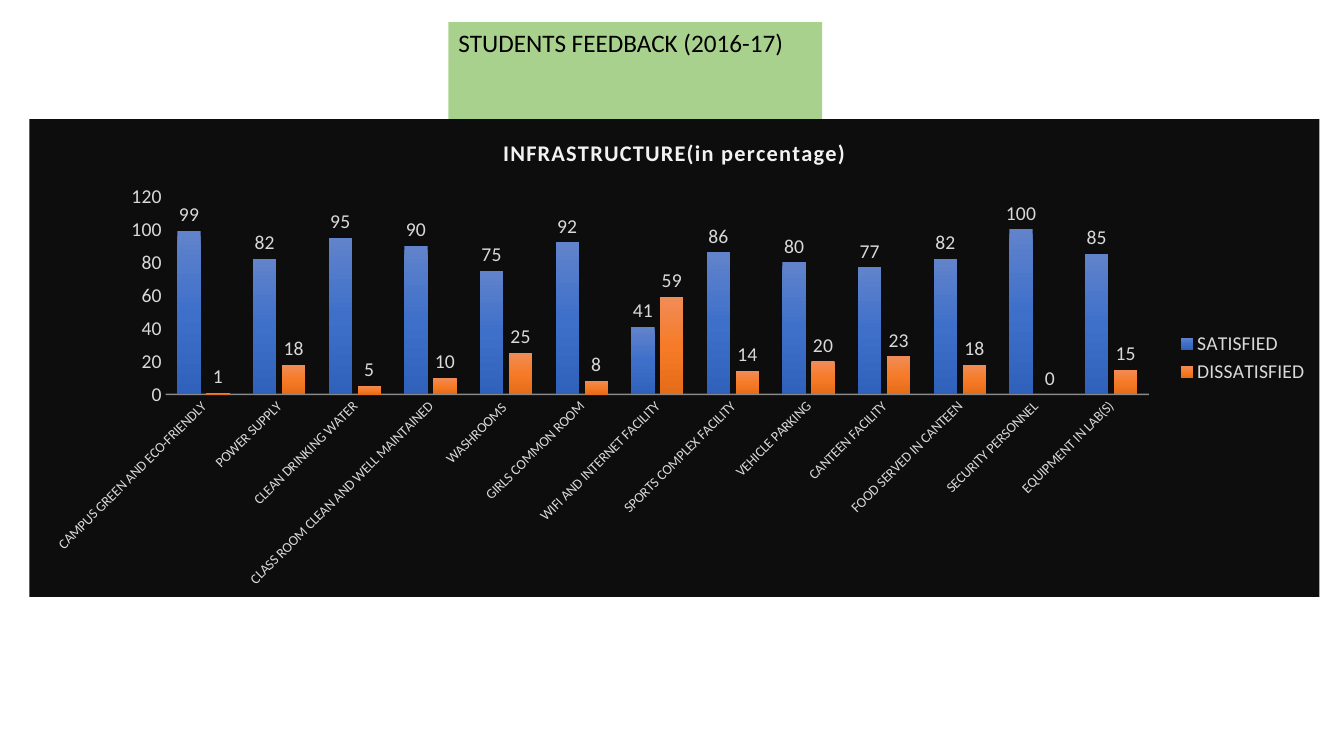
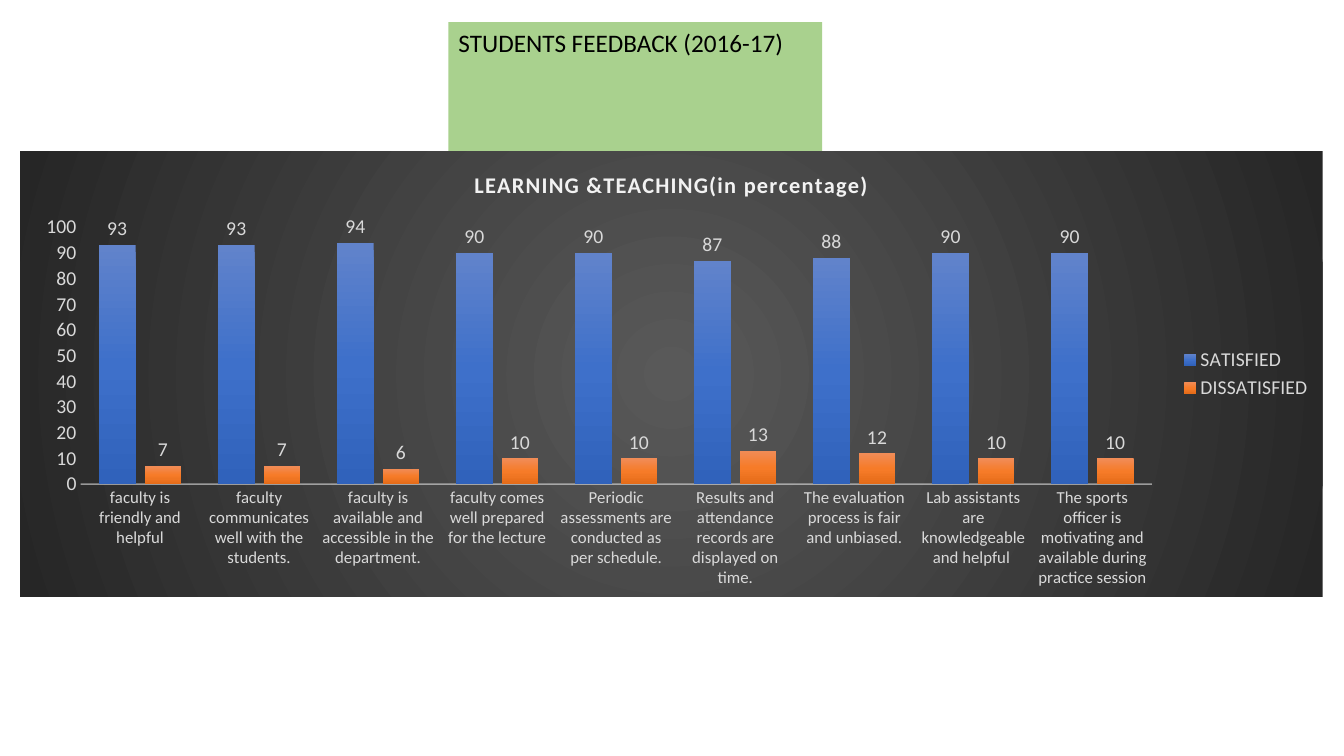
from dataclasses import dataclass
from typing import Any, Optional

from lxml.etree import SubElement
from pptx import Presentation
from pptx.chart.data import CategoryChartData
from pptx.dml.color import RGBColor
from pptx.enum.chart import XL_CHART_TYPE as ChartType
from pptx.enum.chart import XL_LABEL_POSITION as LabelPosition
from pptx.enum.chart import XL_LEGEND_POSITION as LegendPosition
from pptx.enum.chart import XL_TICK_MARK as TickMark
from pptx.enum.text import MSO_ANCHOR as Anchor
from pptx.enum.text import MSO_AUTO_SIZE as AutoSize
from pptx.enum.text import PP_ALIGN as Align
from pptx.oxml import parse_xml
from pptx.oxml.ns import nsdecls, qn
from pptx.util import Cm, Pt

Stops = tuple[tuple[int, str], ...]


# Theme: colours, font and type sizes
@dataclass(frozen=True)
class Theme:
    font: str = "Calibri"
    black: str = "000000"
    banner: str = "A9D18E"
    chart_title: str = "F2F2F2"
    chart_text: str = "D9D9D9"
    axis_line: str = "F2F2F2"
    axis_opacity: int = 54
    satisfied: Stops = ((0, "6183CB"), (50, "3E70CA"), (100, "3062BB"))
    dissatisfied: Stops = ((0, "F18C57"), (50, "F67B28"), (100, "E56C19"))
    flat_dark: Stops = ((0, "0D0D0D"),)
    radial_dark: Stops = ((0, "595959"), (100, "262626"))
    banner_size: int = 18
    title_size: int = 16
    text_size: int = 14


THEME = Theme()
BANNER_TEXT = "STUDENTS FEEDBACK (2016-17)"


@dataclass(frozen=True)
class Answer:
    question: str
    satisfied: int
    dissatisfied: int


@dataclass(frozen=True)
class FeedbackChart:
    title: str
    box: tuple[float, float, float, float]  # left, top, width, height in cm
    background: Stops
    label_size: int
    label_angle: int
    axis_top: int
    axis_step: int
    answers: tuple[Answer, ...]


CHARTS = (
    FeedbackChart(
        "INFRASTRUCTURE(in percentage)", (0.74, 3, 32.51, 12.04),
        THEME.flat_dark, 10, -45, 120, 20,
        (
            Answer("CAMPUS GREEN AND ECO-FRIENDLY", 99, 1),
            Answer("POWER SUPPLY", 82, 18),
            Answer("CLEAN DRINKING WATER", 95, 5),
            Answer("CLASS ROOM CLEAN AND WELL MAINTAINED", 90, 10),
            Answer("WASHROOMS ", 75, 25),
            Answer("GIRLS COMMON ROOM", 92, 8),
            Answer("WIFI AND INTERNET FACILITY", 41, 59),
            Answer("SPORTS COMPLEX FACILITY", 86, 14),
            Answer("VEHICLE PARKING", 80, 20),
            Answer("CANTEEN FACILITY", 77, 23),
            Answer("FOOD SERVED IN CANTEEN", 82, 18),
            Answer("SECURITY PERSONNEL", 100, 0),
            Answer(" EQUIPMENT IN LAB(S)", 85, 15),
        ),
    ),
    FeedbackChart(
        "LEARNING &TEACHING(in percentage)", (0.51, 3.81, 32.82, 11.23),
        THEME.radial_dark, 12, 0, 100, 10,
        (
            Answer("faculty is friendly and helpful", 93, 7),
            Answer("faculty communicates well with the students.", 93, 7),
            Answer("faculty is available and accessible in the department.", 94, 6),
            Answer("faculty comes well prepared for the lecture", 90, 10),
            Answer("Periodic assessments are conducted as per schedule.", 90, 10),
            Answer("Results and attendance records are displayed on time.", 87, 13),
            Answer("The evaluation process is fair and unbiased.", 88, 12),
            Answer("Lab assistants are knowledgeable and helpful ", 90, 10),
            Answer("The sports officer is motivating and available during "
                   "practice session", 90, 10),
        ),
    ),
)


# Formatting helpers
def apply_format(target: Any, values: dict[str, Any]) -> None:
    for name, value in values.items():
        setattr(target, name, value)


def style_font(font: Any, size: int, color: str, bold: Optional[bool] = False) -> None:
    apply_format(font, {"name": THEME.font, "size": Pt(size), "bold": bold})
    font.color.rgb = RGBColor.from_string(color)


def fill_xml(stops: Stops, radial: bool = False) -> str:
    """One stop gives a solid fill, several give a gradient."""
    if len(stops) == 1:
        return f'<a:solidFill><a:srgbClr val="{stops[0][1]}"/></a:solidFill>'
    marks = "".join(
        f'<a:gs pos="{position * 1000}"><a:srgbClr val="{color}"/></a:gs>'
        for position, color in stops
    )
    direction = (
        '<a:path path="circle"><a:fillToRect l="50000" t="50000" r="50000" b="50000"/></a:path>'
        if radial else '<a:lin ang="5400000" scaled="0"/>'
    )
    return f'<a:gradFill rotWithShape="1"><a:gsLst>{marks}</a:gsLst>{direction}</a:gradFill>'


def area_format(stops: Stops, radial: bool = False) -> Any:
    return parse_xml(
        f'<c:spPr {nsdecls("c", "a")}>{fill_xml(stops, radial)}'
        "<a:ln><a:noFill/></a:ln></c:spPr>"
    )


# Parts of a slide
def format_banner(title: Any) -> None:
    apply_format(title, {"left": Cm(11.3), "top": Cm(0.56),
                         "width": Cm(9.42), "height": Cm(1.02)})
    title.fill.solid()
    title.fill.fore_color.rgb = RGBColor.from_string(THEME.banner)
    frame = title.text_frame
    frame.text = BANNER_TEXT
    apply_format(frame, {"word_wrap": True, "vertical_anchor": Anchor.TOP,
                         "auto_size": AutoSize.SHAPE_TO_FIT_TEXT})
    paragraph = frame.paragraphs[0]
    paragraph.alignment = Align.LEFT
    style_font(paragraph.runs[0].font, THEME.banner_size, THEME.black)


def format_title(chart: Any, text: str) -> None:
    frame = chart.chart_title.text_frame
    frame.text = text
    run = frame.paragraphs[0].runs[0]
    style_font(run.font, THEME.title_size, THEME.chart_title, bold=True)
    run._r.get_or_add_rPr().set("spc", "100")


def format_axes(chart: Any, content: FeedbackChart) -> None:
    category_axis, value_axis = chart.category_axis, chart.value_axis
    for axis, size in ((category_axis, content.label_size), (value_axis, THEME.text_size)):
        apply_format(axis, {"has_major_gridlines": False,
                            "major_tick_mark": TickMark.NONE,
                            "minor_tick_mark": TickMark.NONE})
        style_font(axis.tick_labels.font, size, THEME.chart_text)
    apply_format(value_axis, {"minimum_scale": 0, "maximum_scale": content.axis_top,
                              "major_unit": content.axis_step})
    value_axis.format.line.fill.background()

    line = category_axis.format.line
    line.width = Pt(1)
    line.color.rgb = RGBColor.from_string(THEME.axis_line)
    axis_element = category_axis._element
    line_color = axis_element.find(f'{qn("c:spPr")}//{qn("a:srgbClr")}')
    SubElement(line_color, qn("a:alpha")).set("val", str(THEME.axis_opacity * 1000))
    body = axis_element.find(f'{qn("c:txPr")}/{qn("a:bodyPr")}')
    body.set("rot", str(content.label_angle * 60000))
    body.set("vert", "horz")


def format_columns(plot: Any) -> None:
    apply_format(plot, {"gap_width": 100, "overlap": -24, "vary_by_categories": False})
    for series, stops in zip(plot.series, (THEME.satisfied, THEME.dissatisfied)):
        series.format.fill.background()
        old_format = series._element.find(qn("c:spPr"))
        old_format.getparent().replace(old_format, area_format(stops))
        labels = series.data_labels
        apply_format(labels, {"show_value": True, "position": LabelPosition.OUTSIDE_END})
        style_font(labels.font, THEME.text_size, THEME.chart_text)


def add_feedback_chart(slide: Any, content: FeedbackChart) -> None:
    data = CategoryChartData()
    data.categories = [answer.question for answer in content.answers]
    data.add_series("SATISFIED", [answer.satisfied for answer in content.answers])
    data.add_series("DISSATISFIED", [answer.dissatisfied for answer in content.answers])
    box = [Cm(length) for length in content.box]
    chart = slide.shapes.add_chart(ChartType.COLUMN_CLUSTERED, *box, data).chart

    style_font(chart.font, THEME.text_size, THEME.black, bold=None)
    background = area_format(content.background, radial=True)
    chart.element.find(qn("c:chart")).addnext(background)
    apply_format(chart, {"has_title": True, "has_legend": True})
    format_title(chart, content.title)
    apply_format(chart.legend, {"position": LegendPosition.RIGHT,
                                "include_in_layout": False})
    style_font(chart.legend.font, THEME.text_size, THEME.chart_text)
    format_axes(chart, content)
    format_columns(chart.plots[0])


def main() -> None:
    presentation = Presentation()
    apply_format(presentation, {"slide_width": Cm(33.87), "slide_height": Cm(19.05)})
    title_only = presentation.slide_layouts[5]
    for content in CHARTS:
        slide = presentation.slides.add_slide(title_only)
        format_banner(slide.shapes.title)
        add_feedback_chart(slide, content)
    presentation.save("out.pptx")


if __name__ == "__main__":
    main()
